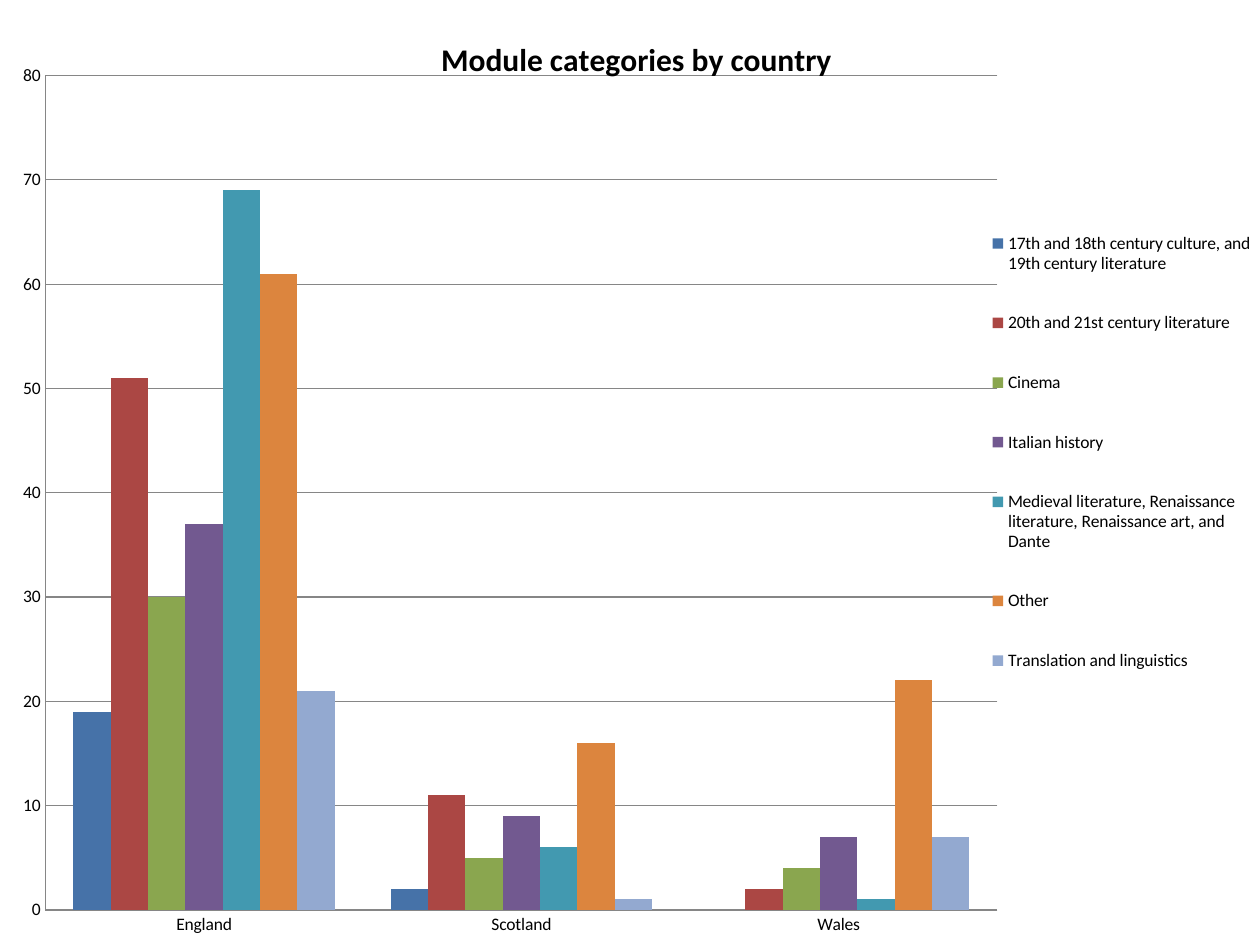
from pptx import Presentation
from pptx.chart.data import CategoryChartData
from pptx.dml.color import RGBColor
from pptx.enum.chart import XL_CHART_TYPE as ChartType, XL_LEGEND_POSITION as LegendPosition
from pptx.enum.chart import XL_TICK_MARK as TickMark
from pptx.oxml import parse_xml
from pptx.oxml.ns import nsdecls, qn
from pptx.util import Inches, Pt

# Content
TITLE = "Module categories by country"
COUNTRIES = ["England", "Scotland", "Wales"]
MODULES = [
    ("17th and 18th century culture, and 19th century literature", (19, 2, None), "4672A8"),
    ("20th and 21st century literature", (51, 11, 2), "AB4744"),
    ("Cinema", (30, 5, 4), "8AA64F"),
    ("Italian history", (37, 9, 7), "725990"),
    ("Medieval literature, Renaissance literature, Renaissance art, and Dante",
     (69, 6, 1), "4299B0"),
    ("Other", (61, 16, 22), "DC853E"),
    ("Translation and linguistics", (21, 1, 7), "93A9D0"),
]
FONT, TEXT, RULE = "Calibri", "000000", "868686"

# Places as shares of the chart's size
TITLE_PLACE = {"x": 0.345, "y": 0.034}
PLOT_PLACE = {"x": 0.036, "y": 0.08, "w": 0.754, "h": 0.883}
LEGEND_PLACE = {"x": 0.795, "y": 0.205, "w": 0.205, "h": 0.547}


def color(value):
    return RGBColor.from_string(value)


def style_font(font, size, bold=False):
    font.name, font.size, font.bold = FONT, Pt(size), bold
    font.color.rgb = color(TEXT)


def style_line(line):
    line.color.rgb = color(RULE)
    line.width = Pt(0.75)


def place(element, shares, after=None, inner=False):
    """Give a chart part a manual layout, following the child named in after."""
    for old in element.findall(qn("c:layout")):
        element.remove(old)
    target = '<c:layoutTarget val="inner"/>' if inner else ""
    modes = "".join(f'<c:{key}Mode val="edge"/>' for key in "xy")
    values = "".join(f'<c:{key} val="{share}"/>' for key, share in shares.items())
    layout = parse_xml(f'<c:layout {nsdecls("c")}><c:manualLayout>'
                       f'{target}{modes}{values}</c:manualLayout></c:layout>')
    if after:
        element.find(qn(after)).addnext(layout)
    else:
        element.insert(0, layout)


presentation = Presentation()
presentation.slide_width, presentation.slide_height = Inches(10), Inches(7.5)
slide = presentation.slides.add_slide(presentation.slide_layouts[6])

# Chart
data = CategoryChartData()
data.categories = COUNTRIES
for name, counts, _ in MODULES:
    data.add_series(name, counts)
chart = slide.shapes.add_chart(ChartType.COLUMN_CLUSTERED, 0, 0,
                               Inches(10.02), Inches(7.5), data).chart
style_font(chart.font, 10)
place(chart.plots[0]._element.getparent(), PLOT_PLACE, inner=True)

# Columns
plot = chart.plots[0]
plot.gap_width, plot.overlap, plot.vary_by_categories = 150, 0, False
for series, (_, _, fill) in zip(plot.series, MODULES):
    series.format.fill.solid()
    series.format.fill.fore_color.rgb = color(fill)

# Title
chart.has_title = True
run = chart.chart_title.text_frame.paragraphs[0].add_run()
run.text = TITLE
style_font(run.font, 18, bold=True)
place(chart.chart_title._element, TITLE_PLACE, after="c:tx")

# Axes
for axis in (chart.category_axis, chart.value_axis):
    axis.major_tick_mark = axis.minor_tick_mark = TickMark.NONE
    style_line(axis.format.line)
counts_axis = chart.value_axis
counts_axis.minimum_scale, counts_axis.maximum_scale, counts_axis.major_unit = 0, 80, 10
counts_axis.has_major_gridlines = True
style_line(counts_axis.major_gridlines.format.line)

# Legend
chart.has_legend = True
chart.legend.position = LegendPosition.RIGHT
chart.legend.include_in_layout = False
style_font(chart.legend.font, 10)
place(chart.legend._element, LEGEND_PLACE, after="c:legendPos")

presentation.save("out.pptx")
